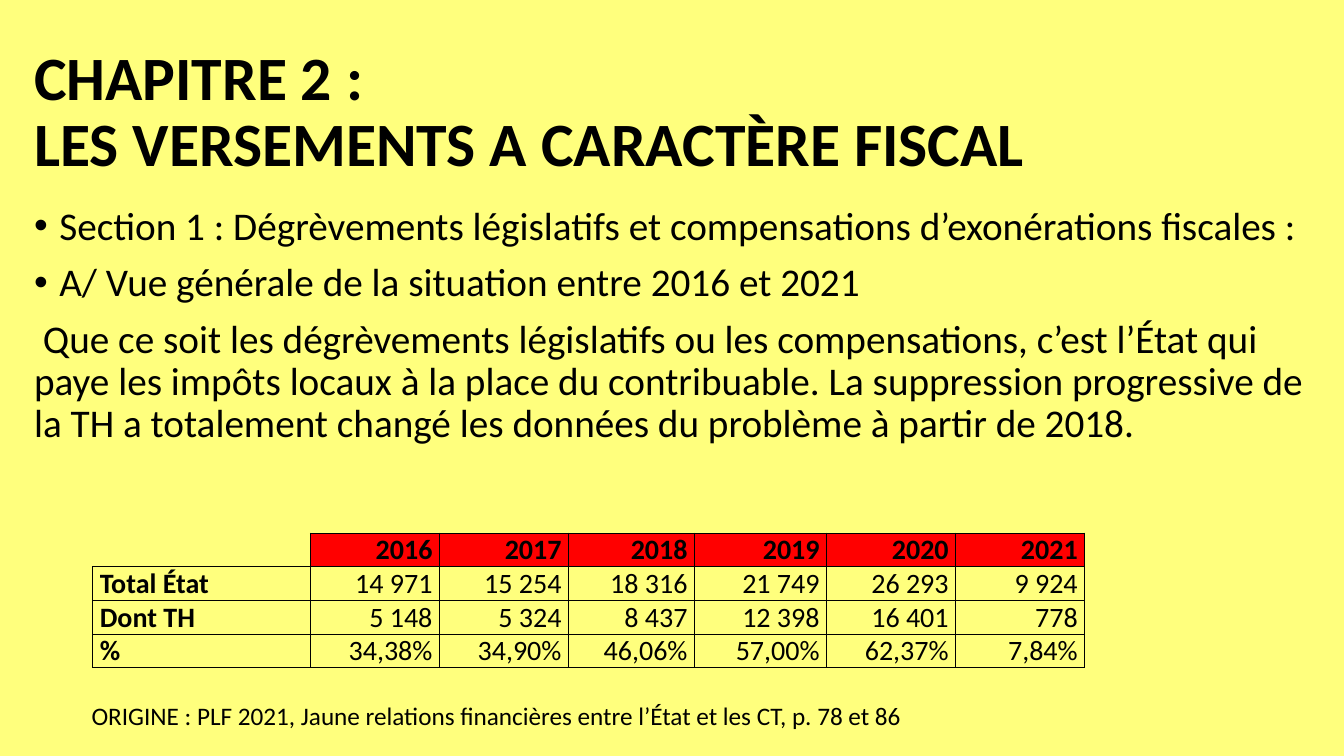
"""Builds the slide on tax-related transfers, with its table for 2016 to 2021."""
from lxml import etree
from pptx import Presentation
from pptx import util as u
from pptx.dml.color import RGBColor
from pptx.enum import text
from pptx.oxml import ns

BLACK = RGBColor(0x00, 0x00, 0x00)
RED = RGBColor(0xFF, 0x00, 0x00)
PALE_YELLOW = RGBColor(0xFF, 0xFF, 0x7D)

MARGIN = 0.24
TABLE_LEFT, TABLE_TOP = 0.92, 5.29
COLUMN_WIDTHS = [2.16, 1.28, 1.28, 1.25, 1.31, 1.28, 1.28]
ROW_HEIGHT = 0.33
ROWS = [
    ["", "2016", "2017", "2018", "2019", "2020", "2021"],
    ["Total État", "14 971", "15 254", "18 316", "21 749", "26 293", "9 924"],
    ["Dont TH", "5 148", "5 324", "8 437", "12 398", "16 401", "778"],
    ["%", "34,38%", "34,90%", "46,06%", "57,00%", "62,37%", "7,84%"],
]
BODY = [
    ("Section 1 : Dégrèvements législatifs et compensations d’exonérations fiscales :", True),
    ("A/ Vue générale de la situation entre 2016 et 2021", True),
    (" Que ce soit les dégrèvements législatifs ou les compensations, c’est l’État qui "
     "paye les impôts locaux à la place du contribuable. La suppression progressive de "
     "la TH a totalement changé les données du problème à partir de 2018.", False),
]


def write(paragraph, wording, size, bold=False, **layout):
    """Fills a paragraph and sets its font and layout."""
    paragraph.text = wording
    for name, value in layout.items():
        setattr(paragraph, name, value)
    for run in paragraph.runs:
        for name, value in {"name": "Calibri", "size": u.Pt(size), "bold": bold}.items():
            setattr(run.font, name, value)
        run.font.color.rgb = BLACK


def add_box(left, top, width, height, anchor=text.MSO_ANCHOR.TOP):
    """Adds a wrapping text box and returns its text frame."""
    shape = slide.shapes.add_textbox(*map(u.Inches, (left, top, width, height)))
    shape.text_frame.word_wrap = True
    shape.text_frame.vertical_anchor = anchor
    return shape.text_frame


presentation = Presentation()
presentation.slide_width, presentation.slide_height = u.Inches(13.33), u.Inches(7.5)
slide = presentation.slides.add_slide(presentation.slide_layouts[6])
slide.background.fill.solid()
slide.background.fill.fore_color.rgb = PALE_YELLOW

title = add_box(MARGIN, 0.4, 12.7, 1.45, text.MSO_ANCHOR.MIDDLE)
write(title.paragraphs[0], "CHAPITRE 2 : \vLES VERSEMENTS A CARACTÈRE FISCAL", 44, True,
      line_spacing=0.9)

body = add_box(MARGIN, 2, 12.95, 4.76)
for index, (wording, bulleted) in enumerate(BODY):
    paragraph = body.add_paragraph() if index else body.paragraphs[0]
    write(paragraph, wording, 28, line_spacing=0.9, space_before=u.Pt(10))
    if bulleted:
        properties = paragraph._p.get_or_add_pPr()
        properties.set("marL", str(u.Inches(0.25)))
        properties.set("indent", str(-u.Inches(0.25)))
        etree.SubElement(properties, ns.qn("a:buFont")).set("typeface", "Arial")
        etree.SubElement(properties, ns.qn("a:buChar")).set("char", "•")

table = slide.shapes.add_table(
    len(ROWS), len(COLUMN_WIDTHS), u.Inches(TABLE_LEFT), u.Inches(TABLE_TOP),
    u.Inches(sum(COLUMN_WIDTHS)), u.Inches(ROW_HEIGHT * len(ROWS))).table
table.first_row = table.horz_banding = False
for column, width in zip(table.columns, COLUMN_WIDTHS):
    column.width = u.Inches(width)

for row_index, row in enumerate(ROWS):
    table.rows[row_index].height = u.Inches(ROW_HEIGHT)
    for column_index, wording in enumerate(row):
        cell = table.cell(row_index, column_index)
        is_header, is_label = row_index == 0, column_index == 0
        is_corner = is_header and is_label
        for side, inset in {"left": 0.07, "right": 0.07, "top": 0, "bottom": 0}.items():
            setattr(cell, f"margin_{side}", u.Inches(inset))
        write(cell.text_frame.paragraphs[0], wording, 20, is_header or is_label,
              alignment=text.PP_ALIGN.LEFT if is_label else text.PP_ALIGN.RIGHT)
        if is_header and not is_corner:
            cell.fill.solid()
            cell.fill.fore_color.rgb = RED
        else:
            cell.fill.background()
        properties = cell._tc.get_or_add_tcPr()
        for position, side in enumerate("LRTB"):
            border = etree.Element(ns.qn(f"a:ln{side}"), w=str(u.Pt(1)))
            if is_corner and side in "LT":
                etree.SubElement(border, ns.qn("a:noFill"))
            else:
                paint = etree.SubElement(border, ns.qn("a:solidFill"))
                etree.SubElement(paint, ns.qn("a:srgbClr")).set("val", str(BLACK))
            properties.insert(position, border)

source = add_box(0.81, 6.9, 8.52, 0.4)
write(source.paragraphs[0],
      "ORIGINE : PLF 2021, Jaune relations financières entre l’État et les CT, p. 78 et 86", 18)

presentation.save("out.pptx")
